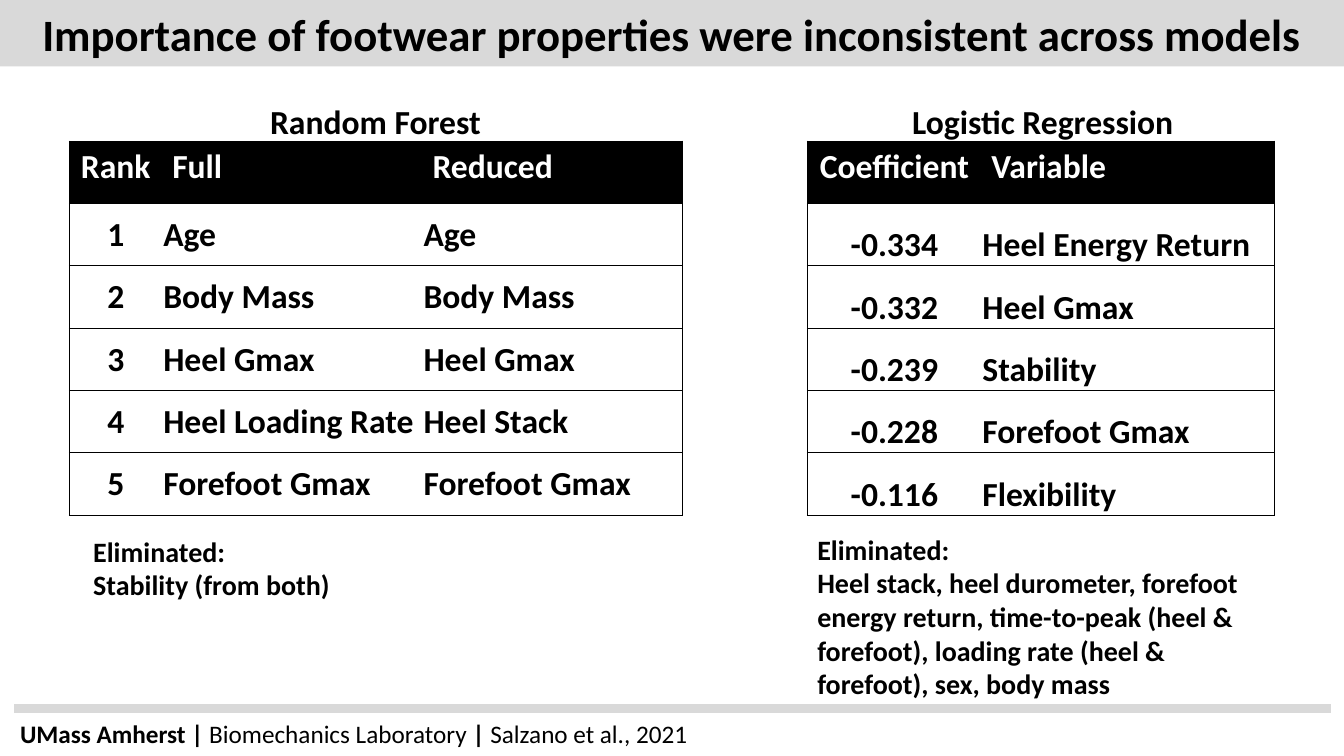
from lxml import etree
from pptx import Presentation
from pptx import util as u
from pptx.dml.color import RGBColor
from pptx.enum import shapes, text
from pptx.oxml import parse_xml
from pptx.oxml.ns import nsdecls, qn

BLACK, WHITE, GREY = "000000", "FFFFFF", "D9D9D9"
LEFT, CENTER = text.PP_ALIGN.LEFT, text.PP_ALIGN.CENTER
TOP, MIDDLE, BOTTOM = (text.MSO_ANCHOR.TOP, text.MSO_ANCHOR.MIDDLE,
                       text.MSO_ANCHOR.BOTTOM)
TABLE_TOP, ROW_HEIGHT = 100.8, 44.55


def color(hex_value):
    return RGBColor.from_string(hex_value)


def apply(obj, values):
    for name, value in values.items():
        setattr(obj, name, value)


def place(sp, box):
    apply(sp, dict(zip(("left", "top", "width", "height"), map(u.Pt, box))))


def write(p, runs, size, hex_value=BLACK, align=LEFT):
    p.alignment = align
    for content, bold in runs:
        r = p.add_run()
        r.text = content
        apply(r.font, {"name": "Calibri", "size": u.Pt(size), "bold": bold})
        r.font.color.rgb = color(hex_value)


def add_title(s, content):
    sp = s.shapes.title
    place(sp, (0, 0, 960, 47.5))
    sp.fill.solid()
    sp.fill.fore_color.rgb = color(GREY)
    tf = sp.text_frame
    apply(tf, {"auto_size": text.MSO_AUTO_SIZE.NONE, "word_wrap": True,
               "vertical_anchor": MIDDLE})
    write(tf.paragraphs[0], [(content, True)], 32, align=CENTER)


def add_text(s, box, paragraphs, size, align=LEFT):
    tf = s.shapes.add_textbox(*map(u.Pt, box)).text_frame
    apply(tf, {"word_wrap": True,
               "auto_size": text.MSO_AUTO_SIZE.SHAPE_TO_FIT_TEXT})
    for i, runs in enumerate(paragraphs):
        p = tf.add_paragraph() if i else tf.paragraphs[0]
        write(p, runs, size, align=align)


def add_border(cell, side, visible):
    paint = (f'<a:solidFill><a:srgbClr val="{BLACK}"/></a:solidFill>'
             if visible else "<a:noFill/>")
    cell._tc.get_or_add_tcPr().append(parse_xml(
        f'<a:ln{side} {nsdecls("a")} w="{u.Pt(0.75)}">{paint}</a:ln{side}>'))


def format_cell(cell, content, is_header, is_first, is_last, anchor):
    for side, visible in (("L", is_first), ("R", is_last),
                          ("T", True), ("B", True)):
        add_border(cell, side, visible)
    if is_header:
        cell.fill.solid()
        cell.fill.fore_color.rgb = color(BLACK)
    else:
        cell.fill.background()
        apply(cell, {"margin_left": u.Pt(0.75), "margin_right": u.Pt(0.75),
                     "margin_top": u.Pt(0.75), "margin_bottom": 0})
    cell.vertical_anchor = TOP if is_header else anchor
    write(cell.text_frame.paragraphs[0], [(content, True)], 24,
          WHITE if is_header else BLACK, CENTER if is_first else LEFT)


def add_ranking(s, left, widths, rows, anchor):
    box = (left, TABLE_TOP, sum(widths), ROW_HEIGHT * len(rows))
    table = s.shapes.add_table(len(rows), len(widths), *map(u.Pt, box)).table
    table.horz_banding = False
    for column, width in zip(table.columns, widths):
        column.width = u.Pt(width)
    for i, row in enumerate(rows):
        table.rows[i].height = u.Pt(ROW_HEIGHT)
        for j, content in enumerate(row):
            format_cell(table.cell(i, j), content, i == 0, j == 0,
                        j == len(row) - 1, anchor)


def add_footer(s):
    ends = map(u.Pt, (10.1, 506.2, 951.1, 506.2))
    line = s.shapes.add_connector(shapes.MSO_CONNECTOR.STRAIGHT, *ends)
    line.line.color.rgb = color(GREY)
    line.line.width = u.Pt(6)
    etree.SubElement(line._element.spPr, qn("a:effectLst"))
    add_text(s, (7.2, 509.8, 646.6, 29), [[
        ("UMass Amherst | ", True), ("Biomechanics Laboratory ", False),
        ("| ", True), ("Salzano et al., 2021", False)]], 18)


def main():
    prs = Presentation()
    apply(prs, {"slide_width": u.Pt(960), "slide_height": u.Pt(540)})
    s = prs.slides.add_slide(prs.slide_layouts[5])
    add_footer(s)
    add_title(s, "Importance of footwear properties were inconsistent "
                 "across models")
    add_ranking(s, 49.5, (66.4, 185.9, 185.9), [
        ("Rank", "Full", "Reduced"),
        ("1", "Age", "Age"),
        ("2", "Body Mass", "Body Mass"),
        ("3", "Heel Gmax", "Heel Gmax"),
        ("4", "Heel Loading Rate", "Heel Stack"),
        ("5", "Forefoot Gmax", "Forefoot Gmax")], MIDDLE)
    add_ranking(s, 576.7, (124.3, 209.3), [
        ("Coefficient", "Variable"),
        ("-0.334", "Heel Energy Return"),
        ("-0.332", "Heel Gmax"),
        ("-0.239", "Stability"),
        ("-0.228", "Forefoot Gmax"),
        ("-0.116", "Flexibility")], BOTTOM)
    for box, heading in (((176.4, 68.4, 183.6, 36), "Random Forest"),
                         ((639.4, 68.4, 211, 36), "Logistic Regression")):
        add_text(s, box, [[(heading, True)]], 24, CENTER)
    for box, names in (
            ((59.5, 378, 360, 55.4), "Stability (from both)"),
            ((576.7, 376.6, 333.4, 128.2),
             "Heel stack, heel durometer, forefoot energy return, "
             "time-to-peak (heel & forefoot), loading rate (heel & "
             "forefoot), sex, body mass")):
        add_text(s, box, [[("Eliminated:", True)], [(names, True)]], 20)
    prs.save("out.pptx")


if __name__ == "__main__":
    main()
